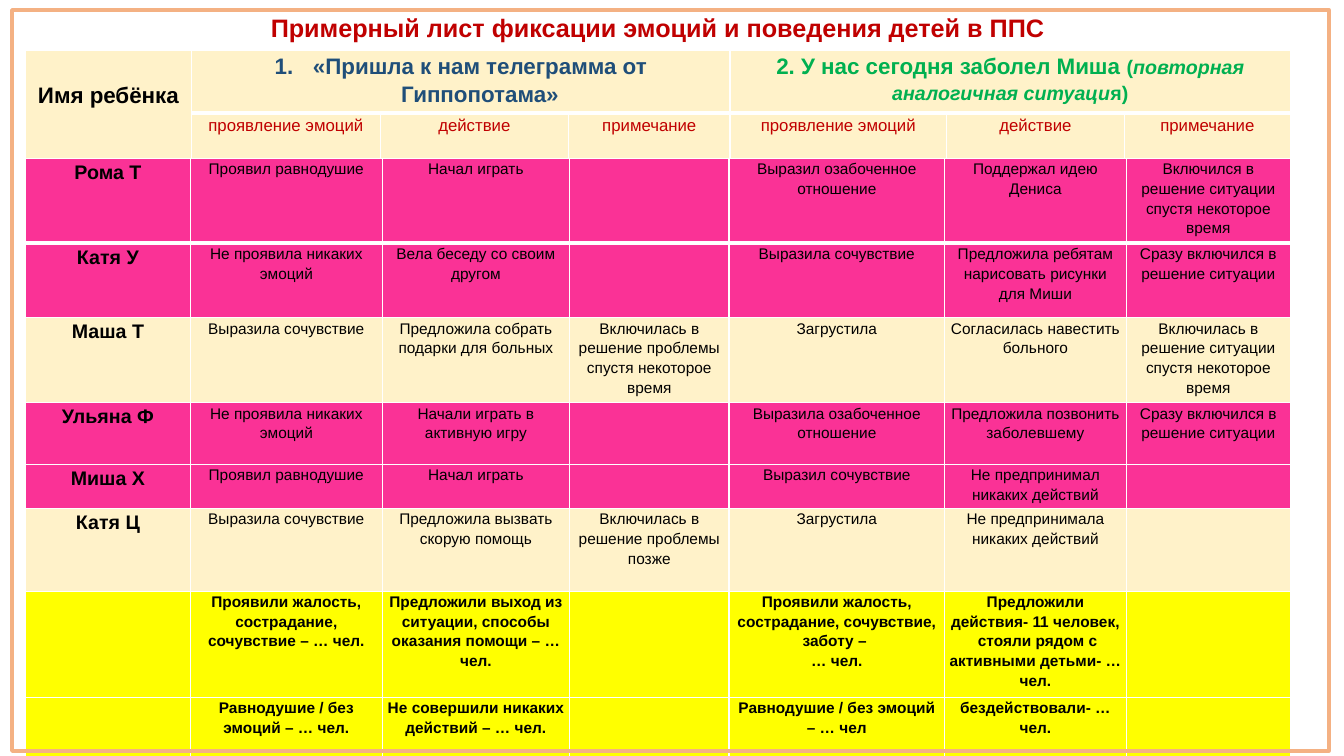
from dataclasses import dataclass

import lxml.etree
import pptx
import pptx.dml.color
import pptx.enum.shapes
import pptx.enum.text
import pptx.oxml.ns
import pptx.util

SLIDE_WIDTH = pptx.util.Inches(13.33)
SLIDE_HEIGHT = pptx.util.Inches(7.5)
FONT = "Arial"
LINE_SPACING = 1.15
SIDE_MARGIN = pptx.util.Inches(0.04)
NAME_DROP = pptx.util.Inches(0.29)
NUMBER_INDENT = pptx.util.Inches(0.38)

CREAM, PINK, YELLOW = "FFF2C9", "FA3296", "FFFF00"
RED, NAVY, GREEN, BLACK, WHITE = "C00000", "1F4E79", "00B050", "000000", "FFFFFF"
FRAME_COLOUR = "F4B183"


@dataclass(frozen=True)
class Area:
    """A place on the slide, in per cent of its width and height."""
    left: float
    top: float
    width: float
    height: float

    def emu(self) -> tuple[int, int, int, int]:
        return (round(SLIDE_WIDTH * self.left / 100), round(SLIDE_HEIGHT * self.top / 100),
                round(SLIDE_WIDTH * self.width / 100), round(SLIDE_HEIGHT * self.height / 100))


@dataclass(frozen=True)
class Run:
    text: str
    size: float
    colour: str = BLACK
    bold: bool = False
    italic: bool = False


@dataclass(frozen=True)
class Record:
    """One row of observations; a line break in a text starts a new paragraph."""
    row_share: float
    fill: str
    child: str
    texts: tuple[str, ...]
    bold: bool = False


TITLE_AREA = Area(19.05, 0.93, 59.78, 5.33)
HEADING_AREA = Area(1.88, 6.67, 94.15, 14.13)
RECORDS_AREA = Area(1.88, 20.93, 94.15, 78.67)
FRAME_AREA = Area(0.9, 1.33, 97.97, 98)

HEADING_COLUMNS = (1.65, 1.87, 1.87, 1.6, 2.15, 1.76, 1.65)
HEADING_ROWS = (0.62, 0.44)
RECORD_COLUMNS = (1.64, 1.9, 1.86, 1.58, 2.14, 1.8, 1.63)

TITLE = Run("Примерный лист фиксации эмоций и поведения детей в ППС", 18, RED, True)
NAME_HEADING = Run("Имя ребёнка", 16, BLACK, True)
TELEGRAM_HEADING = Run("«Пришла к нам телеграмма от Гиппопотама»", 16, NAVY, True)
ILLNESS_HEADING = (
    Run("2. У нас сегодня заболел Миша ", 16, GREEN, True),
    Run("(", 14, GREEN, True),
    Run("повторная аналогичная ситуаци", 14, GREEN, True, True),
    Run("я)", 14, GREEN, True),
)
ASPECTS = ("проявление эмоций", "действие", "примечание")

RECORDS = (
    Record(0.82, PINK, "Рома Т", (
        "Проявил равнодушие", "Начал играть", "",
        "Выразил озабоченное отношение", "Поддержал идею Дениса",
        "Включился в решение ситуации спустя некоторое время")),
    Record(0.74, PINK, "Катя У", (
        "Не проявила никаких эмоций", "Вела беседу со своим другом", "",
        "Выразила сочувствие", "Предложила ребятам нарисовать рисунки для Миши",
        "Сразу включился в решение ситуации")),
    Record(0.82, CREAM, "Маша Т", (
        "Выразила сочувствие", "Предложила собрать подарки для больных",
        "Включилась в решение проблемы спустя некоторое время",
        "Загрустила", "Согласилась навестить больного",
        "Включилась в решение ситуации спустя некоторое время")),
    Record(0.61, PINK, "Ульяна Ф", (
        "Не проявила никаких эмоций", "Начали играть в активную игру", "",
        "Выразила озабоченное отношение", "Предложила позвонить заболевшему",
        "Сразу включился в решение ситуации")),
    Record(0.44, PINK, "Миша Х", (
        "Проявил равнодушие", "Начал играть", "",
        "Выразил сочувствие", "Не предпринимал никаких действий", "")),
    Record(0.82, CREAM, "Катя Ц", (
        "Выразила сочувствие", "Предложила вызвать скорую помощь",
        "Включилась в решение проблемы позже",
        "Загрустила", "Не предпринимала никаких действий", "")),
    Record(1.04, YELLOW, "", (
        "Проявили жалость, сострадание, сочувствие – … чел.",
        "Предложили выход из ситуации, способы оказания помощи – … чел.", "",
        "Проявили жалость, сострадание, сочувствие, заботу – \n… чел.",
        "Предложили действия- 11 человек,\n стояли рядом с активными детьми- … чел.", ""), True),
    Record(0.61, YELLOW, "", (
        "Равнодушие / без эмоций – … чел.", "Не совершили никаких действий – … чел.", "",
        "Равнодушие / без эмоций – … чел", "бездействовали- …чел.", ""), True),
)


def rgb(colour: str) -> pptx.dml.color.RGBColor:
    return pptx.dml.color.RGBColor.from_string(colour)


def add_run(paragraph, part: Run) -> None:
    paragraph.alignment = pptx.enum.text.PP_ALIGN.CENTER
    run = paragraph.add_run()
    run.text = part.text
    run.font.name = FONT
    run.font.size = pptx.util.Pt(part.size)
    run.font.bold = part.bold
    run.font.italic = part.italic
    run.font.color.rgb = rgb(part.colour)


def write_cell(cell, *paragraphs: tuple[Run, ...]) -> None:
    frame = cell.text_frame
    for index, runs in enumerate(paragraphs):
        paragraph = frame.add_paragraph() if index else frame.paragraphs[0]
        paragraph.line_spacing = LINE_SPACING
        for part in runs:
            add_run(paragraph, part)


def number_paragraph(paragraph) -> None:
    properties = paragraph._p.get_or_add_pPr()
    properties.set("marL", str(NUMBER_INDENT))
    properties.set("indent", str(-NUMBER_INDENT))
    lxml.etree.SubElement(properties, pptx.oxml.ns.qn("a:buAutoNum"), type="arabicPeriod")


def set_borders(cell, top: float, bottom: float) -> None:
    properties = cell._tc.get_or_add_tcPr()
    for index, (side, points) in enumerate((("L", 1), ("R", 1), ("T", top), ("B", bottom))):
        line = lxml.etree.Element(pptx.oxml.ns.qn(f"a:ln{side}"), w=str(pptx.util.Pt(points)))
        fill = lxml.etree.SubElement(line, pptx.oxml.ns.qn("a:solidFill"))
        lxml.etree.SubElement(fill, pptx.oxml.ns.qn("a:srgbClr"), val=WHITE)
        properties.insert(index, line)


def add_grid(slide, area: Area, columns: tuple[float, ...], rows: tuple[float, ...],
             fills: tuple[str, ...]):
    """Add a filled table with a thick rule below its first row."""
    left, top, width, height = area.emu()
    table = slide.shapes.add_table(len(rows), len(columns), left, top, width, height).table
    table.first_row = table.horz_banding = False
    for column, share in zip(table.columns, columns):
        column.width = round(width * share / sum(columns))
    for index, (row, share, fill) in enumerate(zip(table.rows, rows, fills)):
        row.height = round(height * share / sum(rows))
        for cell in row.cells:
            cell.margin_left = cell.margin_right = SIDE_MARGIN
            cell.margin_top = cell.margin_bottom = 0
            cell.fill.solid()
            cell.fill.fore_color.rgb = rgb(fill)
            set_borders(cell, 3 if index == 1 else 1, 3 if index == 0 else 1)
    return table


def add_title(slide) -> None:
    frame = slide.shapes.add_textbox(*TITLE_AREA.emu()).text_frame
    frame.word_wrap = False
    frame.auto_size = pptx.enum.text.MSO_AUTO_SIZE.SHAPE_TO_FIT_TEXT
    add_run(frame.paragraphs[0], TITLE)


def add_headings(slide) -> None:
    table = add_grid(slide, HEADING_AREA, HEADING_COLUMNS, HEADING_ROWS, (CREAM, CREAM))
    name, telegram, illness = (table.cell(0, column) for column in (0, 1, 4))
    name.merge(table.cell(1, 0))
    telegram.merge(table.cell(0, 3))
    illness.merge(table.cell(0, 6))
    name.margin_top = NAME_DROP
    write_cell(name, (NAME_HEADING,))
    write_cell(telegram, (TELEGRAM_HEADING,))
    number_paragraph(telegram.text_frame.paragraphs[0])
    write_cell(illness, ILLNESS_HEADING)
    for column, aspect in enumerate(ASPECTS * 2, start=1):
        write_cell(table.cell(1, column), (Run(aspect, 12, RED),))


def add_records(slide) -> None:
    table = add_grid(slide, RECORDS_AREA, RECORD_COLUMNS,
                     tuple(record.row_share for record in RECORDS),
                     tuple(record.fill for record in RECORDS))
    for row, record in zip(table.rows, RECORDS):
        child, *observations = row.cells
        if record.child:
            write_cell(child, (Run(record.child, 14, bold=True),))
        for cell, text in zip(observations, record.texts):
            if text:
                write_cell(cell, *((Run(line, 11, bold=record.bold),) for line in text.split("\n")))


def add_frame(slide) -> None:
    frame = slide.shapes.add_shape(pptx.enum.shapes.MSO_SHAPE.RECTANGLE, *FRAME_AREA.emu())
    frame.shadow.inherit = False
    frame.fill.background()
    frame.line.color.rgb = rgb(FRAME_COLOUR)
    frame.line.width = pptx.util.Pt(2.75)


def main() -> None:
    presentation = pptx.Presentation()
    presentation.slide_width, presentation.slide_height = SLIDE_WIDTH, SLIDE_HEIGHT
    slide = presentation.slides.add_slide(presentation.slide_layouts[6])
    add_title(slide)
    add_headings(slide)
    add_records(slide)
    add_frame(slide)
    presentation.save("out.pptx")


if __name__ == "__main__":
    main()
